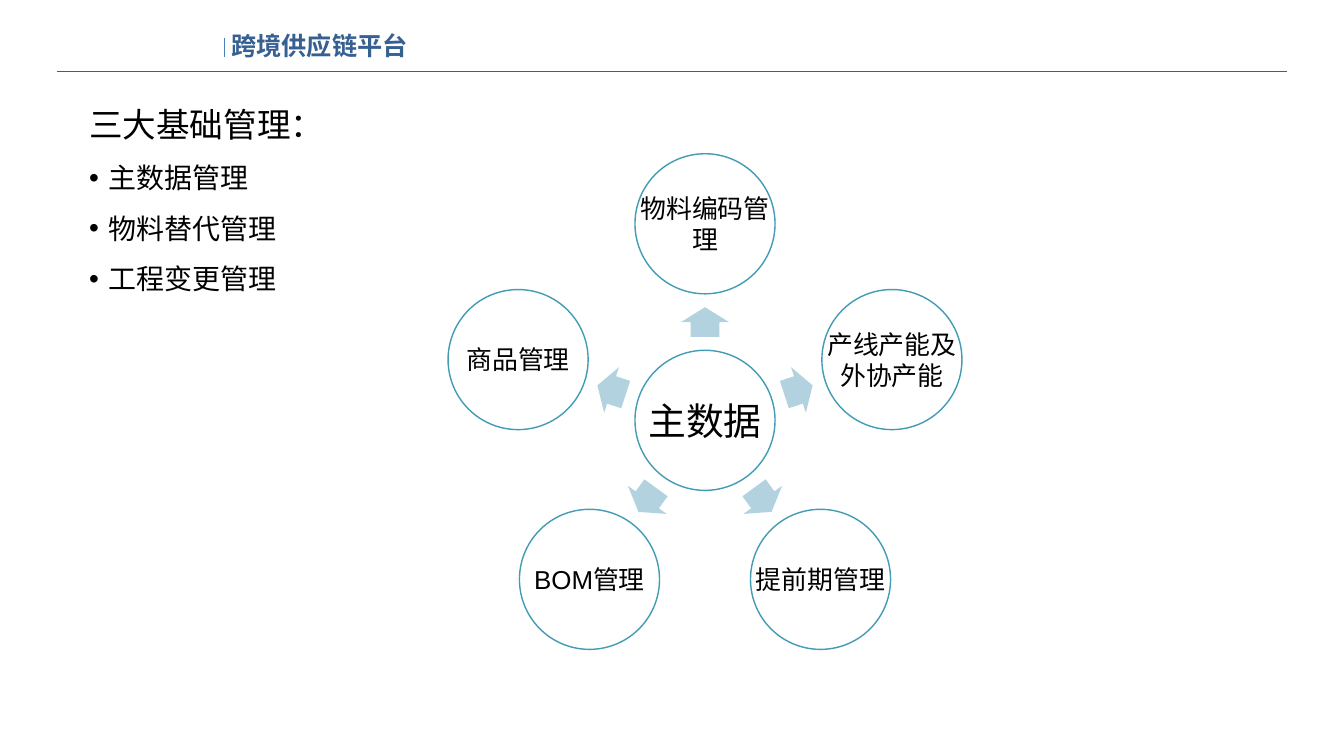
from dataclasses import dataclass
from math import cos, radians, sin

from lxml.etree import SubElement
from pptx import Presentation
from pptx.dml.color import RGBColor as Rgb
from pptx.enum.shapes import MSO_CONNECTOR as Conn, MSO_SHAPE as Kind
from pptx.enum.text import MSO_ANCHOR as Anchor, MSO_AUTO_SIZE as Fit, PP_ALIGN as Align
from pptx.oxml.ns import qn
from pptx.util import Emu, Pt


@dataclass(frozen=True)
class Theme:
    head: Rgb = Rgb(0x37, 0x60, 0x92)
    mark: Rgb = Rgb(0x4B, 0x7E, 0xBC)
    text: Rgb = Rgb(0, 0, 0)
    fill: Rgb = Rgb(255, 255, 255)
    ring: Rgb = Rgb(0x44, 0x9C, 0xB4)
    arrow: Rgb = Rgb(0xB2, 0xD2, 0xDF)
    latin: str = "Arial"
    han: str = "Noto Sans CJK SC"
    title: int = 36
    lead: int = 48
    item: int = 40
    hub: int = 54
    node: int = 37


@dataclass(frozen=True)
class Node:
    label: str
    angle: int  # degrees clockwise from the right


THEME = Theme()
LABELS = ["物料编码管理", "产线产能及外协产能", "提前期管理", "BOM管理", "商品管理"]
ITEMS = ["主数据管理", "物料替代管理", "工程变更管理"]
MID = (1399, 834)  # centre of the wheel
ORBIT, REACH = 390, 195  # centre to circles, centre to arrows
DISC = 278


def px(n: float) -> Emu:
    """One px is a hundredth of an inch."""
    return Emu(round(n * 9144))


def place(shape, x: int, y: int, w: int, h: int) -> None:
    shape.left, shape.top, shape.width, shape.height = map(px, (x, y, w, h))


def style(par, size: int, color: Rgb, face: str, bold: bool = False) -> None:
    for run in par.runs:
        font = run.font
        font.size, font.name, font.bold = Pt(size), face, bold
        font.color.rgb = color


def rule(slide, x1: int, y1: int, x2: int, y2: int, color: Rgb) -> None:
    line = slide.shapes.add_connector(Conn.STRAIGHT, px(x1), px(y1), px(x2), px(y2))
    line.line.color.rgb = color
    line.line.width = Pt(1)
    SubElement(line._element.spPr, qn("a:effectLst"))


def spot(angle: int, dist: int) -> tuple[float, float]:
    """Point at a distance from the middle of the wheel."""
    turn = radians(angle)
    return MID[0] + dist * cos(turn), MID[1] + dist * sin(turn)


def disc(slide, label: str, at: tuple[float, float], size: int, pad: int) -> None:
    area = (px(at[0] - DISC / 2), px(at[1] - DISC / 2), px(DISC), px(DISC))
    ring = slide.shapes.add_shape(Kind.OVAL, *area)
    ring.shadow.inherit = False
    ring.fill.solid()
    ring.fill.fore_color.rgb = THEME.fill
    ring.line.color.rgb = THEME.ring
    ring.line.width = Pt(2)
    # The label spans the full width of the circle
    frame = slide.shapes.add_textbox(*area).text_frame
    frame.word_wrap = True
    frame.vertical_anchor = Anchor.MIDDLE
    frame.margin_left = frame.margin_right = px(pad)
    frame.margin_top = frame.margin_bottom = px(pad)
    frame.text = label
    par = frame.paragraphs[0]
    par.alignment = Align.CENTER
    style(par, size, THEME.text, THEME.latin)


def arrow(slide, angle: int) -> None:
    w, h = 59, 95
    x, y = spot(angle, REACH)
    shape = slide.shapes.add_shape(
        Kind.RIGHT_ARROW, px(x - w / 2), px(y - h / 2), px(w), px(h))
    shape.adjustments[0], shape.adjustments[1] = 0.6, 0.5
    shape.rotation = angle % 360
    shape.shadow.inherit = False
    shape.fill.solid()
    shape.fill.fore_color.rgb = THEME.arrow
    shape.line.fill.background()


def header(slide) -> None:
    rule(slide, 113, 141, 2554, 141, THEME.head)
    rule(slide, 446, 75, 446, 113, THEME.mark)
    title = slide.shapes.title
    place(title, 449, 51, 2113, 79)
    frame = title.text_frame
    frame.text = "跨境供应链平台"
    frame.vertical_anchor = Anchor.MIDDLE
    frame.auto_size = Fit.NONE
    par = frame.paragraphs[0]
    par.alignment = Align.LEFT
    style(par, THEME.title, THEME.head, THEME.han, True)
    props = par.runs[0]._r.get_or_add_rPr()
    SubElement(props, qn("a:ea"), typeface=THEME.han)


def points(slide) -> None:
    body = slide.placeholders[1]
    place(body, 167, 201, 543, 394)
    frame = body.text_frame
    frame.auto_size = Fit.SHAPE_TO_FIT_TEXT
    frame.text = "\n".join(["三大基础管理：", *ITEMS])
    for i, par in enumerate(frame.paragraphs):
        props = par._p.get_or_add_pPr()
        dent = px(38) if i else 0
        props.set("marL", str(dent))
        props.set("indent", str(-dent))
        if i:
            SubElement(props, qn("a:buFont"), typeface=THEME.latin)
            SubElement(props, qn("a:buChar"), char="•")
        else:
            SubElement(props, qn("a:buNone"))
        par.space_before = Pt(0)
        par.line_spacing = 1.5 if i else 1.0
        style(par, THEME.item if i else THEME.lead, THEME.text, THEME.latin)


def wheel(slide) -> None:
    disc(slide, "主数据", MID, THEME.hub, 7)
    step = 360 // len(LABELS)
    for node in [Node(label, i * step - 90) for i, label in enumerate(LABELS)]:
        arrow(slide, node.angle)
        disc(slide, node.label, spot(node.angle, ORBIT), THEME.node, 5)


def main() -> None:
    deck = Presentation()
    deck.slide_width, deck.slide_height = px(2667), px(1500)
    slide = deck.slides.add_slide(deck.slide_layouts[1])
    header(slide)
    points(slide)
    wheel(slide)
    deck.save("out.pptx")


if __name__ == "__main__":
    main()
